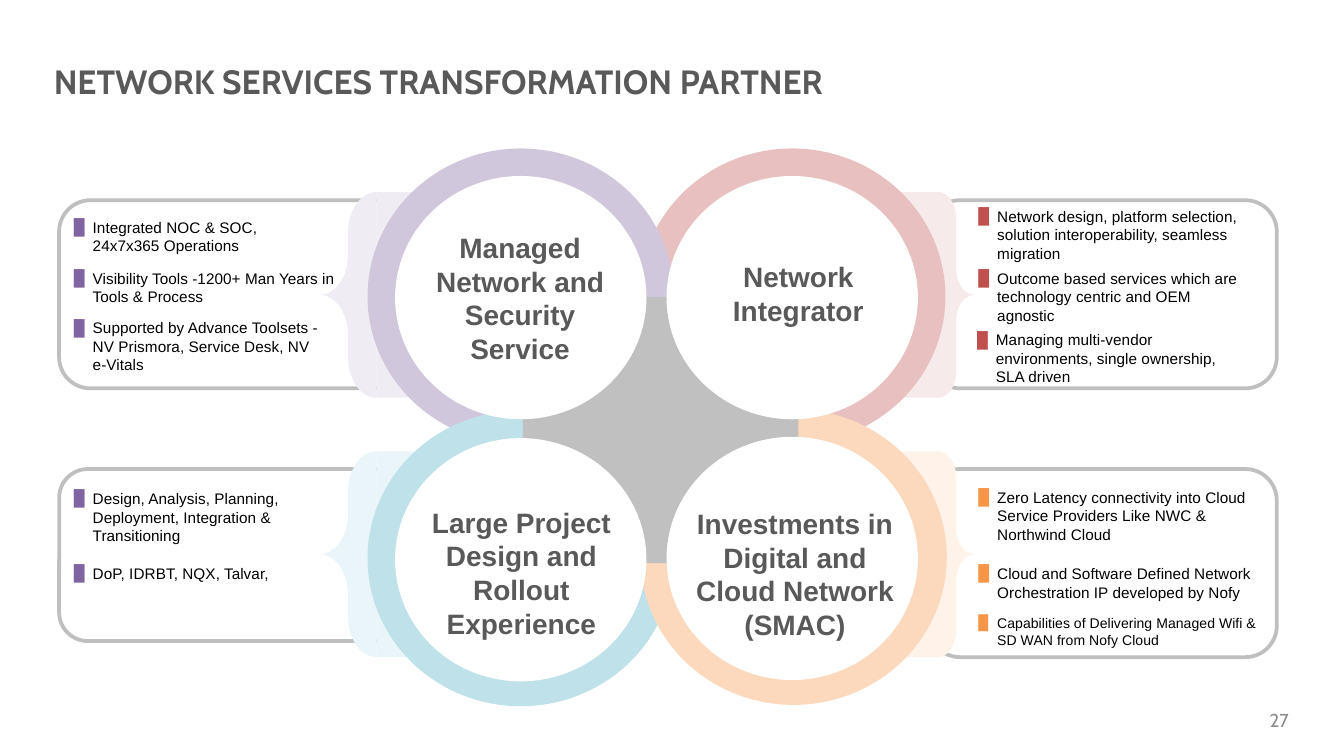
from lxml import etree
from pptx import Presentation
from pptx.dml.color import RGBColor
from pptx.enum.shapes import MSO_SHAPE
from pptx.enum.text import MSO_ANCHOR, MSO_AUTO_SIZE, PP_ALIGN
from pptx.oxml.ns import qn
from pptx.util import Inches, Pt

RECT, ROUNDED = MSO_SHAPE.RECTANGLE, MSO_SHAPE.ROUNDED_RECTANGLE
BRACE, OVAL = MSO_SHAPE.LEFT_BRACE, MSO_SHAPE.OVAL
TOP, MIDDLE = MSO_ANCHOR.TOP, MSO_ANCHOR.MIDDLE
LEFT, CENTER, RIGHT = PP_ALIGN.LEFT, PP_ALIGN.CENTER, PP_ALIGN.RIGHT

COLORS = {
    "heading": "595959", "body": "000000", "number": "8C8C8C",
    "border": "BFBFBF", "hub": "C0C0C0", "disc": "FFFFFF",
    "purple": "8064A2", "red": "C0504D", "orange": "F79646",
    "purple ring": "D1C7DD", "purple wing": "F0ECF4",
    "red ring": "E8C0BF", "red wing": "F7EAEA",
    "blue ring": "BEE1EA", "blue wing": "E9F5F8",
    "orange ring": "FCD9BC", "orange wing": "FEF2E9",
}
RING_SIZE = (2.03, 1.95)
DISC_SIZE = (1.87, 1.81)
BODY_SIZE = 8.25

# Boxes are (left, top, width, height). A point group is
# (left, top, width, height, [(text, size, space before), ...]).
QUADRANTS = [
    {"title": "Network Integrator", "hue": "red", "bullet": "red", "on_left": False,
     "panel": (6.91, 1.49, 2.59, 1.4), "wing_top": 1.43,
     "ring": (4.88, 1.23), "disc": (4.96, 1.31), "label": (5.14, 1.59, 1.6, 1.18),
     "points": [
         (7.28, 1.54, 2.16, 0.42, [("Network design, platform selection, solution "
                                    "interoperability, seamless migration", BODY_SIZE, 0)]),
         (7.28, 2, 2, 0.42, [("Outcome based services which are technology centric "
                              "and OEM agnostic", BODY_SIZE, 0)]),
         (7.27, 2.46, 2, 0.42, [("Managing multi-vendor environments, single ownership, "
                                 "SLA driven", BODY_SIZE, 0)])]},
    {"title": "Managed Network and Security Service", "hue": "purple", "bullet": "purple",
     "on_left": True, "panel": (0.44, 1.49, 2.67, 1.4), "wing_top": 1.43,
     "ring": (2.86, 1.23), "disc": (2.94, 1.31), "label": (3.13, 1.53, 1.48, 1.37),
     "points": [
         (0.55, 1.62, 1.83, 0.42, [("Integrated NOC & SOC, 24x7x365 Operations",
                                    BODY_SIZE, 0)]),
         (0.55, 2, 2, 0.28, [("Visibility Tools -1200+ Man Years in Tools & Process",
                              BODY_SIZE, 0)]),
         (0.55, 2.37, 1.83, 0.42, [("Supported by Advance Toolsets - NV Prismora, "
                                    "Service Desk, NV e-Vitals", BODY_SIZE, 0)])]},
    {"title": "Large Project Design and Rollout Experience", "hue": "blue",
     "bullet": "purple", "on_left": True, "panel": (0.44, 3.49, 2.79, 1.28),
     "wing_top": 3.36, "ring": (2.86, 3.18), "disc": (2.94, 3.26),
     "label": (3.01, 3.67, 1.74, 1.18),
     "points": [
         (0.55, 3.64, 2.03, 0.69, [
             ("Design, Analysis, Planning, Deployment, Integration & Transitioning",
              BODY_SIZE, 0),
             ("DoP, IDRBT, NQX, Talvar,", BODY_SIZE, 10.5)])]},
    {"title": "Investments in Digital and Cloud Network (SMAC)", "hue": "orange",
     "bullet": "orange", "on_left": False, "panel": (6.91, 3.49, 2.59, 1.4),
     "wing_top": 3.36, "ring": (4.89, 3.17), "disc": (4.96, 3.25),
     "label": (5.09, 3.72, 1.65, 1.1),
     "points": [
         (7.28, 3.63, 2.16, 1.31, [
             ("Zero Latency connectivity into Cloud Service Providers Like NWC & "
              "Northwind Cloud", BODY_SIZE, 0),
             ("Capabilities of Delivering Managed Wifi & SD WAN from Nofy Cloud", 7.5, 38)]),
         (7.28, 4.2, 2.07, 0.42, [("Cloud and Software Defined Network Orchestration IP "
                                   "developed by Nofy", BODY_SIZE, 0)])]},
]


def rgb(name):
    return RGBColor.from_string(COLORS[name])


def add_shape(slide, kind, box, fill=None, line=None, weight=0):
    shape = slide.shapes.add_shape(kind, *map(Inches, box))
    shape.shadow.inherit = False
    if fill:
        shape.fill.solid()
        shape.fill.fore_color.rgb = rgb(fill)
    else:
        shape.fill.background()
    if line:
        shape.line.color.rgb = rgb(line)
        shape.line.width = Pt(weight)
    else:
        shape.line.fill.background()
    return shape


def set_frame(frame, anchor=TOP, insets=(0, 0, 0, 0)):
    frame.word_wrap = True
    frame.auto_size = MSO_AUTO_SIZE.NONE
    frame.vertical_anchor = anchor
    (frame.margin_left, frame.margin_top,
     frame.margin_right, frame.margin_bottom) = map(Inches, insets)


def add_run(paragraph, text, size, color, font="Arial", bold=False, align=LEFT):
    paragraph.alignment = align
    run = paragraph.add_run()
    run.text = text
    run.font.name, run.font.size, run.font.bold = font, Pt(size), bold
    run.font.color.rgb = rgb(color)


def add_text_frame(slide, box, **frame_options):
    frame = slide.shapes.add_textbox(*map(Inches, box)).text_frame
    set_frame(frame, **frame_options)
    return frame


def set_bullet(paragraph, color):
    """Give the paragraph a coloured block bullet with a hanging indent."""
    props = paragraph._p.get_or_add_pPr()
    props.set("marL", str(Inches(0.14)))
    props.set("indent", str(-Inches(0.14)))
    bullet_color = etree.SubElement(props, qn("a:buClr"))
    etree.SubElement(bullet_color, qn("a:srgbClr"), val=COLORS[color])
    etree.SubElement(props, qn("a:buFont"), typeface="Arial")
    etree.SubElement(props, qn("a:buChar"), char="█")


def add_title(slide, box, text):
    title = slide.shapes.title
    title.left, title.top, title.width, title.height = map(Inches, box)
    set_frame(title.text_frame, MIDDLE, (0, 0.05, 0.1, 0.05))
    add_run(title.text_frame.paragraphs[0], text, 18, "heading", "Cabin", True)


def add_wing(slide, top, hue, on_left):
    """Join a ring to its panel with a pale band and a pointed brace."""
    height, fill = 1.53, f"{hue} wing"
    band_left = 2.8 if on_left else 6.29
    brace_left, brace_width = (2.38, 0.42) if on_left else (6.98, 0.27)
    add_shape(slide, RECT, (band_left, top, 0.71, height), fill)
    brace = add_shape(slide, BRACE, (brace_left, top, brace_width, height), fill)
    brace.adjustments[0] = 0.714
    if not on_left:
        brace._element.spPr.find(qn("a:xfrm")).set("flipH", "1")


def add_points(slide, box, points, color):
    frame = add_text_frame(slide, box)
    for i, (text, size, space_before) in enumerate(points):
        paragraph = frame.add_paragraph() if i else frame.paragraphs[0]
        set_bullet(paragraph, color)
        if space_before:
            paragraph.space_before = Pt(space_before)
        add_run(paragraph, text, size, "body")


def add_quadrants(slide):
    """Stack the four quadrants layer by layer, so that their rings overlap."""
    for quadrant in QUADRANTS:
        add_shape(slide, ROUNDED, quadrant["panel"], line="border", weight=2)
        add_wing(slide, quadrant["wing_top"], quadrant["hue"], quadrant["on_left"])
    for quadrant in QUADRANTS:
        ring = f"{quadrant['hue']} ring"
        add_shape(slide, OVAL, quadrant["ring"] + RING_SIZE, ring, ring, 18)
    add_shape(slide, RECT, (3.89, 2.21, 2.05, 1.98), "hub")
    for quadrant in QUADRANTS:
        add_shape(slide, OVAL, quadrant["disc"] + DISC_SIZE, "disc")
        label = add_text_frame(slide, quadrant["label"], anchor=MIDDLE)
        add_run(label.paragraphs[0], quadrant["title"], 15, "heading",
                bold=True, align=CENTER)
        for *box, points in quadrant["points"]:
            add_points(slide, box, points, quadrant["bullet"])


def add_page_number(slide, box, number):
    frame = add_text_frame(slide, box, anchor=MIDDLE, insets=(0.1, 0.05, 0, 0.05))
    add_run(frame.paragraphs[0], number, 10, "number", "Cabin", align=RIGHT)


def main():
    deck = Presentation()
    deck.slide_width = Inches(10)
    deck.slide_height = deck.slide_width * 9 // 16
    slide = deck.slides.add_slide(deck.slide_layouts[5])
    add_title(slide, (0.4, 0.4, 8.24, 0.4), "NETWORK SERVICES TRANSFORMATION PARTNER")
    add_quadrants(slide)
    add_page_number(slide, (9.06, 5.21, 0.53, 0.3), "27")
    deck.save("out.pptx")


if __name__ == "__main__":
    main()
